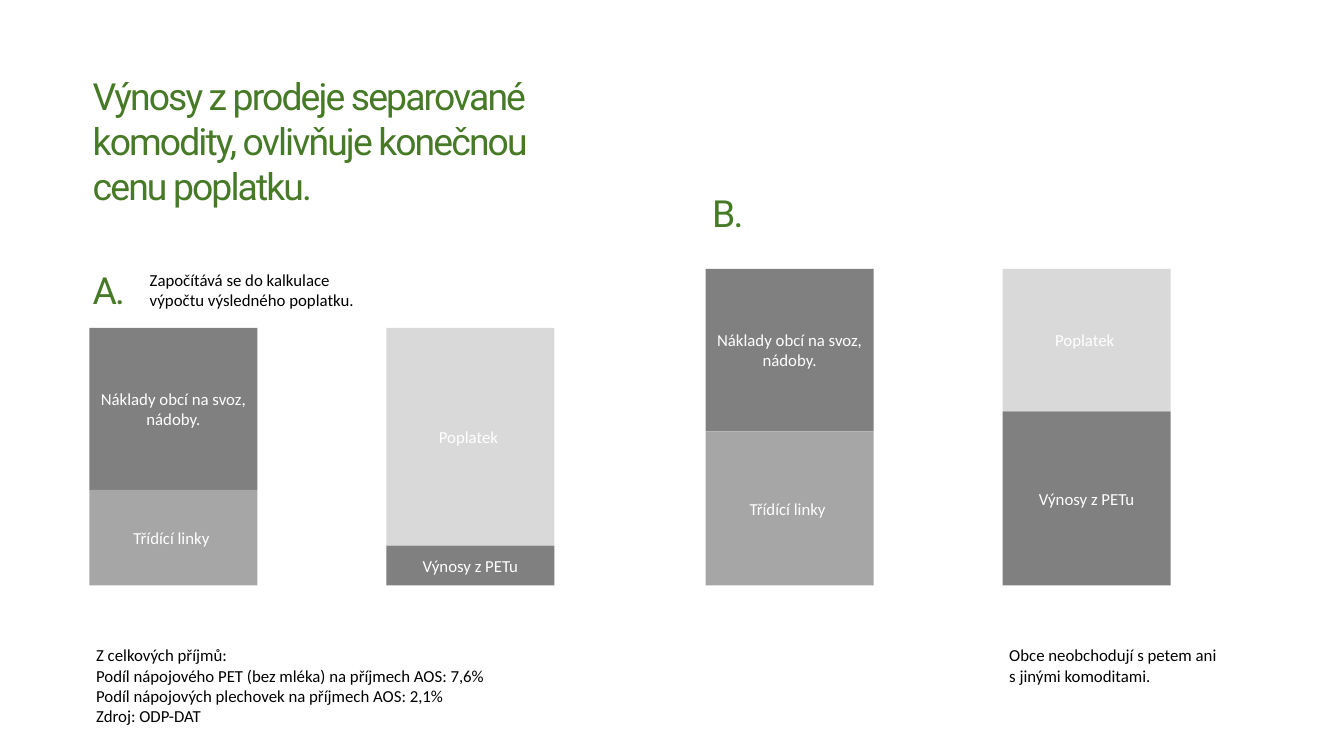
"""Builds the slide that compares how sales revenue affects the final fee."""
from pptx import Presentation
from pptx.dml.color import RGBColor
from pptx.enum.shapes import MSO_SHAPE
from pptx.enum.text import MSO_ANCHOR, MSO_AUTO_SIZE, PP_ALIGN
from pptx.util import Inches, Pt
from lxml.etree import SubElement
from pptx.oxml.ns import qn

GREEN = RGBColor(0x46, 0x7A, 0x26)
BLACK = RGBColor(0x00, 0x00, 0x00)
WHITE = RGBColor(0xFF, 0xFF, 0xFF)
DARK_GREY = RGBColor(0x80, 0x80, 0x80)
MIDDLE_GREY = RGBColor(0xA6, 0xA6, 0xA6)
LIGHT_GREY = RGBColor(0xD9, 0xD9, 0xD9)

HEADING_FONT = {"name": "Roboto", "size": Pt(40), "bold": False}
BODY_FONT = {"name": "Calibri", "size": Pt(18), "bold": False}
PLAIN_PARAGRAPH = {"alignment": PP_ALIGN.LEFT, "space_before": Pt(0)}
CENTRED_PARAGRAPH = {"alignment": PP_ALIGN.CENTER}
TEXT_FRAME = {
    "word_wrap": True,
    "auto_size": MSO_AUTO_SIZE.NONE,
    "vertical_anchor": MSO_ANCHOR.TOP,
}
BAR_FRAME = {"word_wrap": True, "vertical_anchor": MSO_ANCHOR.MIDDLE}

BAR_WIDTH = 2.5
BAR_BASE = 8.71
COSTS = "Náklady obcí na svoz, nádoby."
SORTING = "Třídící linky "
FEE = "Poplatek "
REVENUE = "Výnosy z PETu"

STACKS = [
    (1.33, [(4.88, COSTS, DARK_GREY), (7.29, SORTING, MIDDLE_GREY)]),
    (5.75, [(4.88, FEE, LIGHT_GREY), (8.12, REVENUE, DARK_GREY)]),
    (10.5, [(4, COSTS, DARK_GREY), (6.42, SORTING, MIDDLE_GREY)]),
    (14.92, [(4, FEE, LIGHT_GREY), (6.12, REVENUE, DARK_GREY)]),
]
HEADINGS = [("A.", (1.28, 3.93, 7.6, 0.77)), ("B.", (10.5, 2.78, 7.6, 0.77))]
NOTES = [
    ("Započítává se do kalkulace výpočtu výsledného poplatku.", (2.13, 3.96, 3.42, 0.71)),
    ("Obce neobchodují s petem ani s jinými komoditami.", (14.92, 9.55, 3.42, 0.71)),
]
TITLE_LINES = ["Výnosy z prodeje separované komodity, ovlivňuje konečnou", "cenu poplatku."]
SUMMARY_LINES = [
    "Z celkových příjmů:",
    "Podíl nápojového PET (bez mléka) na příjmech AOS: 7,6%",
    "Podíl nápojových plechovek na příjmech AOS: 2,1%",
    "Zdroj: ODP-DAT",
]


def apply_format(target, values):
    for name, value in values.items():
        setattr(target, name, value)


class SlideBuilder:
    def __init__(self, slide):
        self.slide = slide

    def fill_text(self, shape, lines, font, color, paragraph_format, frame_format):
        frame = shape.text_frame
        apply_format(frame, frame_format)
        for index, line in enumerate(lines):
            para = frame.add_paragraph() if index else frame.paragraphs[0]
            apply_format(para, paragraph_format)
            span = para.add_run()
            span.text = line
            apply_format(span.font, font)
            span.font.color.rgb = color
            if font is HEADING_FONT:
                span._r.get_or_add_rPr().set("spc", "-200")

    def placeholder(self, index, lines, area, font, color):
        shape = self.slide.placeholders[index]
        apply_format(shape, dict(zip(("left", "top", "width", "height"), map(Inches, area))))
        self.fill_text(shape, lines, font, color, PLAIN_PARAGRAPH, TEXT_FRAME)
        return shape

    def title(self, lines, area):
        self.placeholder(0, lines, area, HEADING_FONT, GREEN)

    def summary(self, lines, area):
        shape = self.placeholder(1, lines, area, BODY_FONT, BLACK)
        for para in shape.text_frame.paragraphs:
            properties = para._p.get_or_add_pPr()
            properties.set("marL", "0")
            properties.set("indent", "0")
            SubElement(properties, qn("a:buNone"))

    def text(self, line, area, font, color):
        box = self.slide.shapes.add_textbox(*map(Inches, area))
        self.fill_text(box, [line], font, color, PLAIN_PARAGRAPH, TEXT_FRAME)

    def bar(self, label, color, area):
        box = self.slide.shapes.add_shape(MSO_SHAPE.RECTANGLE, *map(Inches, area))
        box.shadow.inherit = False
        box.fill.solid()
        box.fill.fore_color.rgb = color
        box.line.fill.background()
        self.fill_text(box, [label], BODY_FONT, WHITE, CENTRED_PARAGRAPH, BAR_FRAME)

    def stack(self, left, parts):
        bottoms = [top for top, _, _ in parts[1:]] + [BAR_BASE]
        for (top, label, color), bottom in zip(parts, bottoms):
            self.bar(label, color, (left, top, BAR_WIDTH, bottom - top))


def main():
    deck = Presentation()
    deck.slide_width = Inches(20)
    deck.slide_height = Inches(11.25)
    page = SlideBuilder(deck.slides.add_slide(deck.slide_layouts[1]))
    page.title(TITLE_LINES, (1.28, 1.04, 7.6, 2.12))
    page.summary(SUMMARY_LINES, (1.33, 9.55, 10, 1.31))
    for left, parts in STACKS:
        page.stack(left, parts)
    for line, area in HEADINGS:
        page.text(line, area, HEADING_FONT, GREEN)
    for line, area in NOTES:
        page.text(line, area, BODY_FONT, BLACK)
    deck.save("out.pptx")


if __name__ == "__main__":
    main()
